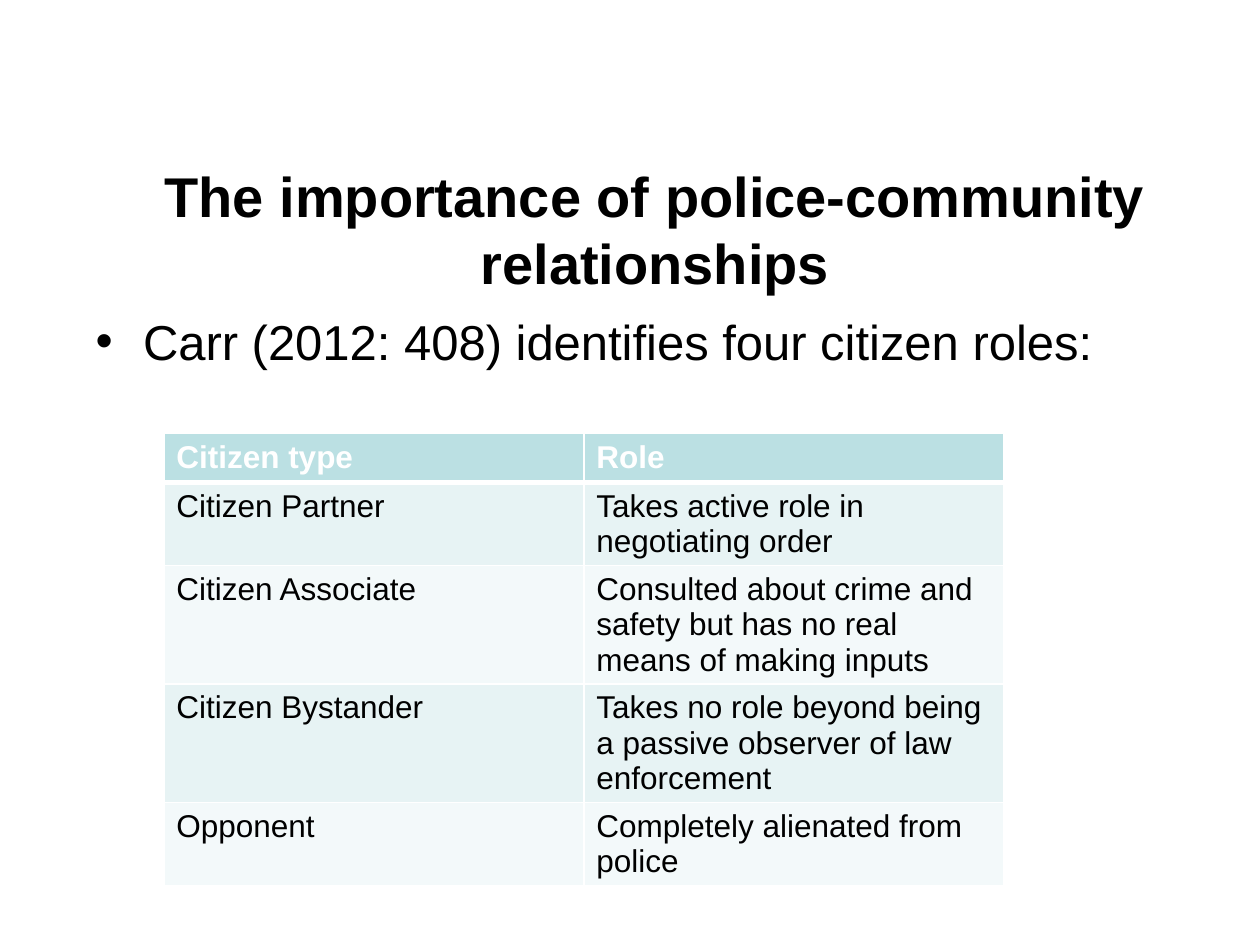
from lxml import etree
from pptx import Presentation
from pptx.dml.color import RGBColor
from pptx.enum.text import MSO_ANCHOR, MSO_AUTO_SIZE, PP_ALIGN
from pptx.oxml.ns import qn
from pptx.util import Pt

MIDDLE, TOP = MSO_ANCHOR.MIDDLE, MSO_ANCHOR.TOP
CENTER, LEFT = PP_ALIGN.CENTER, PP_ALIGN.LEFT
FIXED = MSO_AUTO_SIZE.NONE

ROLES = [
    ("Citizen type", "Role"),
    ("Citizen Partner", "Takes active role in negotiating order"),
    ("Citizen Associate",
     "Consulted about crime and safety but has no real means of making inputs"),
    ("Citizen Bystander",
     "Takes no role beyond being a passive observer of law enforcement"),
    ("Opponent", "Completely alienated from police"),
]


def color(hex):
    return RGBColor.from_string(hex)


def write(frame, text, size=18, bold=False, ink="000000", align=LEFT, font="Arial"):
    para = frame.paragraphs[0]
    para.alignment = align
    para.space_before = Pt(0)
    run = para.add_run()
    run.text = text
    run.font.name = font
    run.font.size = Pt(size)
    run.font.bold = bold
    run.font.color.rgb = color(ink)
    return para


class Deck:
    head, bands, white = "BBE0E3", ("E7F3F4", "F3F9FA"), "FFFFFF"

    def __init__(self):
        self.file = Presentation()
        self.file.slide_width, self.file.slide_height = Pt(720), Pt(540)
        self.slide = self.file.slides.add_slide(self.file.slide_layouts[1])
        fill = self.slide.background.fill
        fill.solid()
        fill.fore_color.rgb = color(self.white)

    def place(self, shape, box, anchor):
        shape.left, shape.top, shape.width, shape.height = map(Pt, box)
        frame = shape.text_frame
        frame.word_wrap = True
        frame.auto_size = FIXED
        frame.vertical_anchor = anchor
        return frame

    def title(self, text, box):
        frame = self.place(self.slide.shapes.title, box, MIDDLE)
        write(frame, text, size=32, bold=True, align=CENTER)

    def body(self, text, box, inset):
        frame = self.place(self.slide.placeholders[1], box, TOP)
        frame.margin_top = Pt(inset)
        props = write(frame, text, size=28)._p.get_or_add_pPr()
        props.set("marL", str(Pt(27)))
        props.set("indent", str(Pt(-27)))
        etree.SubElement(props, qn("a:buFont"), typeface="Arial")
        etree.SubElement(props, qn("a:buChar"), char="•")

    def border(self, cell, low):
        props = cell._tc.get_or_add_tcPr()
        for spot, (side, width) in enumerate(
                (("L", 1), ("R", 1), ("T", 1), ("B", low))):
            line = etree.Element(qn(f"a:ln{side}"), w=str(Pt(width)))
            fill = etree.SubElement(line, qn("a:solidFill"))
            etree.SubElement(fill, qn("a:srgbClr"), val=self.white)
            props.insert(spot, line)

    def table(self, rows, box):
        shape = self.slide.shapes.add_table(len(rows), len(rows[0]), *map(Pt, box))
        grid = shape.table
        for i, row in enumerate(rows):
            first = i == 0
            grid.rows[i].height = Pt(28 if first else 29.2)
            for j, text in enumerate(row):
                cell = grid.cell(i, j)
                cell.fill.solid()
                cell.fill.fore_color.rgb = color(
                    self.head if first else self.bands[(i - 1) % 2])
                write(cell.text_frame, text, bold=first,
                      ink=self.white if first else "000000")
                self.border(cell, 3 if first else 1)
                if i == 1:
                    cell._tc.tcPr.find(qn("a:lnT")).set("w", str(Pt(3)))
        shape.height = Pt(box[3])


def main():
    deck = Deck()
    deck.title("The importance of police-community relationships",
               (50.4, 106, 648, 49.7))
    deck.body("Carr (2012: 408) identifies four citizen roles:",
              (47.5, 131.8, 648, 303), 46)
    deck.table(ROLES, (93.6, 247.7, 480, 273.6))
    deck.file.save("out.pptx")


if __name__ == "__main__":
    main()
